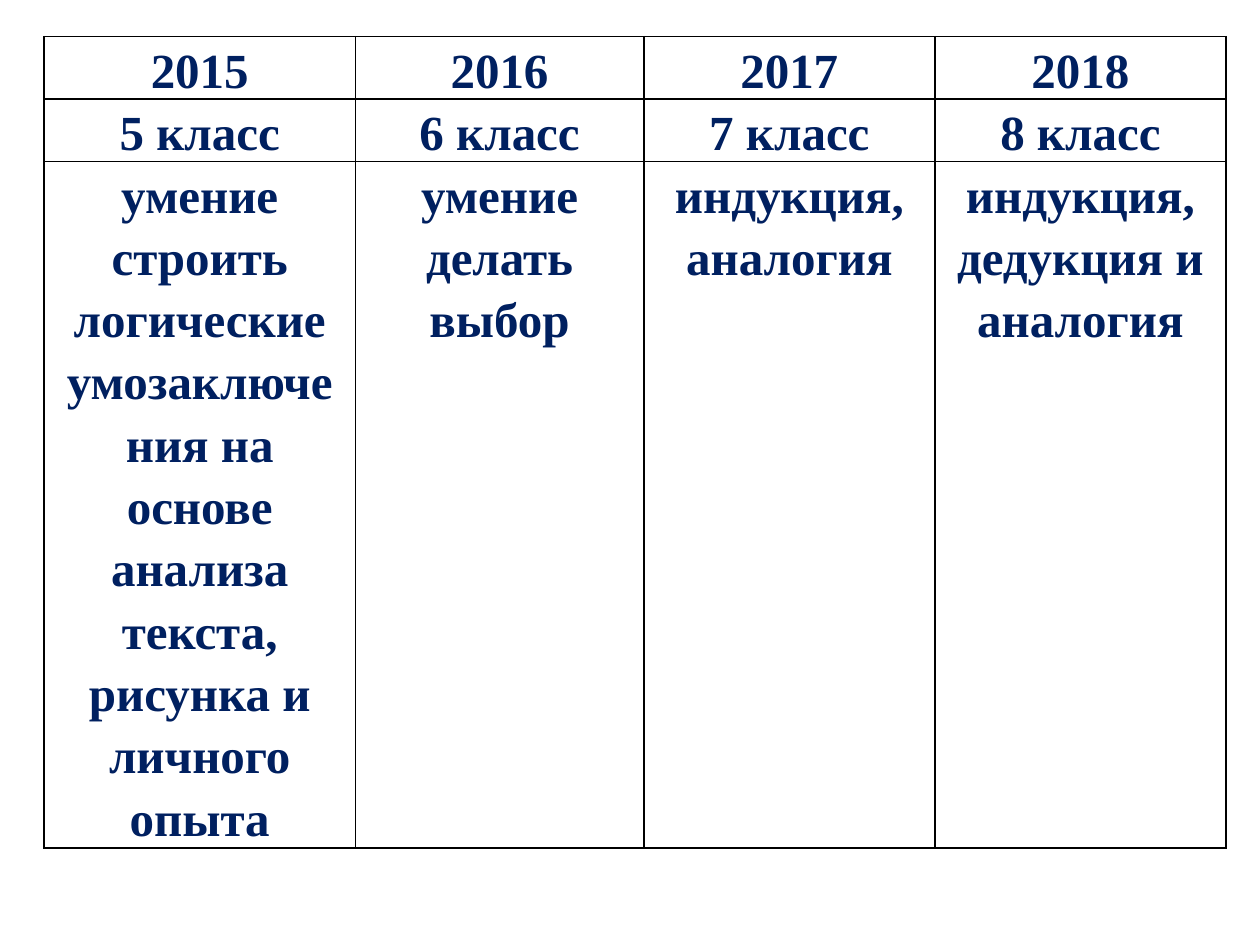
from lxml import etree
from pptx import Presentation
from pptx.dml.color import RGBColor
from pptx.enum.text import MSO_ANCHOR, PP_ALIGN
from pptx.oxml.ns import qn
from pptx.util import Inches, Pt

CENTER = PP_ALIGN.CENTER
TOP = MSO_ANCHOR.TOP

ROWS = [
    ("2015", "2016", "2017", "2018"),
    ("5 класс", "6 класс", "7 класс", "8 класс"),
    (
        "умение строить логические умозаключения на основе анализа текста, рисунка и личного опыта",
        "умение делать выбор",
        "индукция, аналогия",
        "индукция, дедукция и аналогия",
    ),
]
COLUMN_WIDTHS = (2.47, 2.29, 2.31, 2.31)
ROW_HEIGHTS = (0.47, 0.47, 5.45)
LEFT, TABLE_TOP = 0.35, 0.29


def color(value):
    return RGBColor.from_string(value)


def write_text(cell, text, font="Times New Roman", size=28, fill="002060", bold=True):
    cell.margin_left = cell.margin_right = Inches(0.07)
    cell.margin_top = cell.margin_bottom = 0
    cell.vertical_anchor = TOP
    para = cell.text_frame.paragraphs[0]
    para.alignment = CENTER
    para.line_spacing = 1.15
    span = para.add_run()
    span.text = text
    span.font.name = font
    span.font.size = Pt(size)
    span.font.bold = bold
    span.font.color.rgb = color(fill)


def draw_borders(cell, line="000000", width=1):
    properties = cell._tc.get_or_add_tcPr()
    for index, side in enumerate(("a:lnL", "a:lnR", "a:lnT", "a:lnB")):
        border = etree.Element(qn(side), w=str(Pt(width)))
        fill = etree.SubElement(border, qn("a:solidFill"))
        etree.SubElement(fill, qn("a:srgbClr"), val=line)
        properties.insert(index, border)


def main():
    deck = Presentation()
    deck.slide_width, deck.slide_height = Inches(10), Inches(7.5)
    page = deck.slides.add_slide(deck.slide_layouts[6])
    frame = page.shapes.add_table(
        len(ROWS), len(COLUMN_WIDTHS), Inches(LEFT), Inches(TABLE_TOP),
        Inches(sum(COLUMN_WIDTHS)), Inches(sum(ROW_HEIGHTS)),
    )
    table = frame.table
    table.first_row = table.horz_banding = False
    for column, width in zip(table.columns, COLUMN_WIDTHS):
        column.width = Inches(width)
    for row, height, texts in zip(table.rows, ROW_HEIGHTS, ROWS):
        row.height = Inches(height)
        for cell, text in zip(row.cells, texts):
            write_text(cell, text)
            cell.fill.background()
            draw_borders(cell)
    deck.save("out.pptx")


if __name__ == "__main__":
    main()
